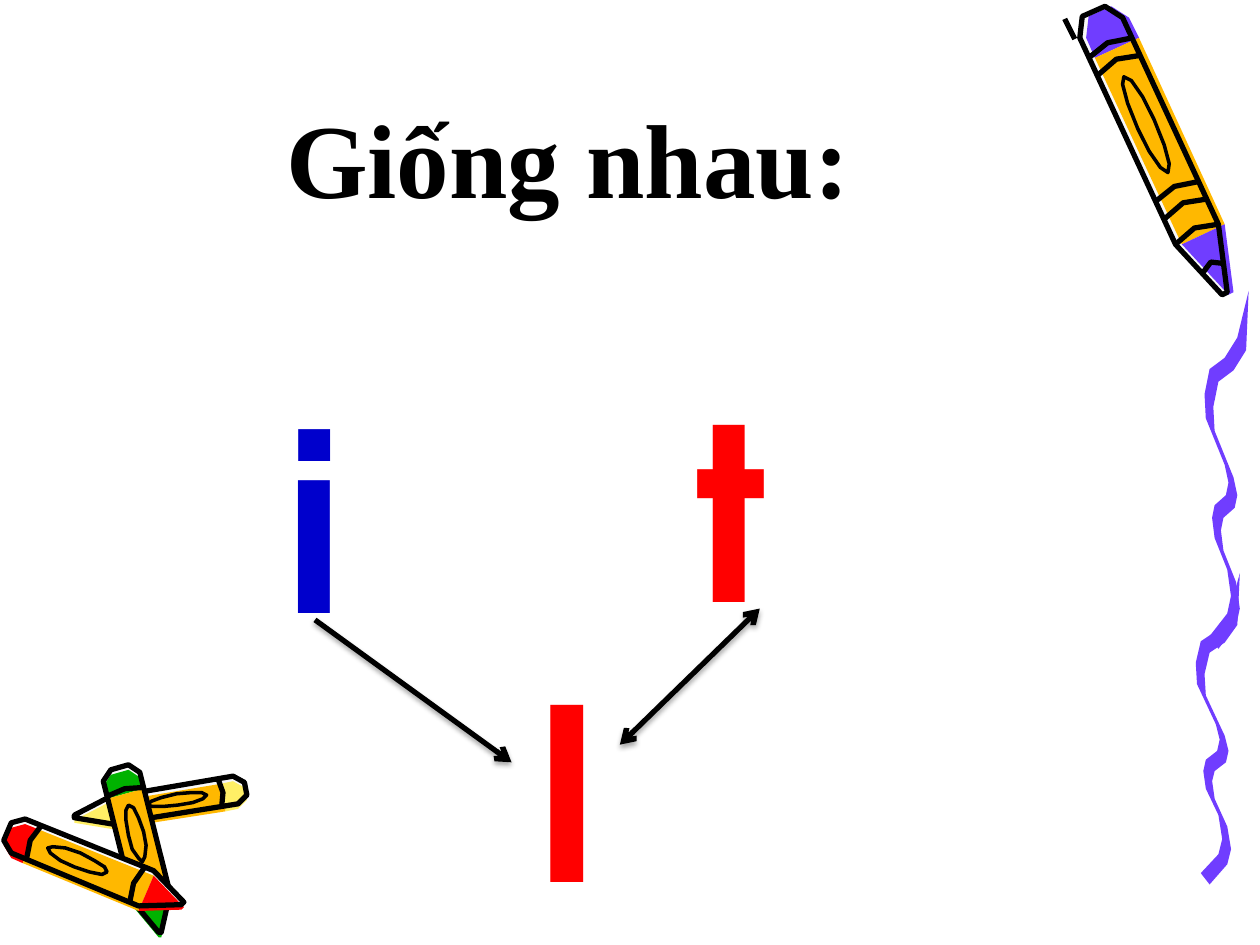
import math

import pptx
import pptx.dml.color
import pptx.enum.shapes
import pptx.enum.text
import pptx.oxml
import pptx.oxml.ns
import pptx.util

PX = 9144  # EMU per px, 100 px to the inch
BLACK, WHITE, RED, BLUE = "000000", "FFFFFF", "FF0000", "0000CC"
PURPLE, ORANGE, GREEN, YELLOW, PALE = "703DFF", "FFB800", "00B200", "FFEF66", "F8F8F8"
LETTER_FONT, TITLE_FONT, BREAK_FONT = "TeX Gyre Adventor", "Times New Roman", "Comic Neue"
LETTER_SIZE = 137
INK = 3  # line width in points

# A crayon in its own measure: u runs from blunt end (0) to tip (1),
# v from one side (-1) to the other (1)
CAP, SHOULDER = 0.13, 0.79
CAP_PART = [(0, -0.5), (0.06, -1), (CAP, -1), (CAP, 1), (0.06, 1), (0, 0.5)]
PAPER_PART = [(CAP, -1), (SHOULDER, -1), (SHOULDER, 1), (CAP, 1)]
TIP_PART = [(SHOULDER, -1), (1, -0.1), (1, 0.1), (SHOULDER, 1)]
SILHOUETTE = CAP_PART[:2] + TIP_PART + CAP_PART[-2:]
LABEL = [(0.4 + 0.17 * math.cos(k * math.pi / 6), 0.4 * math.sin(k * math.pi / 6))
         for k in range(12)]
LONG_BANDS = (CAP, 0.19, 0.64, 0.7, SHOULDER, 0.91)
SHORT_BANDS = (CAP + 0.02, 0.74)

# The squiggle: one edge of a stroke; a slanted nib gives the other edge
WAVE = [(35, 0), (26, 37), (16, 53), (4, 62), (0, 82), (1, 101), (16, 138), (19, 152),
        (17, 162), (8, 170), (6, 180), (8, 196), (18, 221), (21, 242), (18, 256), (4, 274)]
NIB = (7, 10)

SHADOW = ('<a:outerShdw blurRad="39370" dist="22860" dir="5400000" rotWithShape="0">'
          '<a:srgbClr val="000000"><a:alpha val="35000"/></a:srgbClr></a:outerShdw>')


def rgb(color):
    return pptx.dml.color.RGBColor.from_string(color)


def px(*lengths):
    return [pptx.util.Emu(n * PX) for n in lengths]


class SlideBuilder:
    def __init__(self, slide):
        self.s = slide

    def style(self, r, font, size, color):
        r.font.name, r.font.size, r.font.bold = font, pptx.util.Pt(size), True
        r.font.color.rgb = rgb(color)

    def outline(self, points, fill=None, ink=0, close=True):
        points = [(round(x), round(y)) for x, y in points]
        fb = self.s.shapes.build_freeform(*points[0], scale=PX)
        fb.add_line_segments(points[1:], close=close)
        sp = fb.convert_to_shape()
        sp.shadow.inherit = False
        if fill:
            sp.fill.solid()
            sp.fill.fore_color.rgb = rgb(fill)
        else:
            sp.fill.background()
        if ink:
            sp.line.color.rgb = rgb(BLACK)
            sp.line.width = pptx.util.Pt(ink)
        else:
            sp.line.fill.background()

    def crayon(self, end, tip, half_width, color, bands, shift):
        """Colours are printed a little off (by shift) from the ink lines."""
        dx, dy = tip[0] - end[0], tip[1] - end[1]
        side = half_width / math.hypot(dx, dy)

        def place(part, move=(0, 0)):
            return [(end[0] + u * dx - v * side * dy + move[0],
                     end[1] + u * dy + v * side * dx + move[1]) for u, v in part]

        self.outline(place(SILHOUETTE), PALE)
        for part, fill in ((CAP_PART, color), (PAPER_PART, ORANGE), (TIP_PART, color)):
            self.outline(place(part, shift), fill)
        self.outline(place(SILHOUETTE), ink=INK)
        self.outline(place(LABEL), ink=INK - 1)
        for u in bands:
            # A band reaches the edge, which narrows beyond the shoulder
            reach = min(1, (1 - u) / (1 - SHOULDER))
            bent = [(u, -reach), (u - 0.02, 0), (u, reach)]
            self.outline(place(bent), ink=INK, close=False)

    def squiggle(self, left, top, stretch):
        edge = [(left + x, top + y * stretch) for x, y in WAVE]
        other = [(x + NIB[0], y + NIB[1] * stretch) for x, y in edge[1:]]
        self.outline(edge + other[::-1], PURPLE)

    def letter(self, text, box, color):
        tf = self.s.shapes.add_textbox(*px(*box)).text_frame
        tf.word_wrap = True
        tf.text = text
        self.style(tf.paragraphs[0].runs[0], LETTER_FONT, LETTER_SIZE, color)

    def letter_card(self, text, box, color):
        kind = pptx.enum.shapes.MSO_SHAPE.RECTANGLE
        sp = self.s.shapes.add_shape(kind, *px(*box))
        sp.shadow.inherit = False
        sp.fill.solid()
        sp.fill.fore_color.rgb = sp.line.color.rgb = rgb(WHITE)
        sp.line.width = pptx.util.Pt(2)
        tf = sp.text_frame
        tf.text = text
        tf.vertical_anchor = pptx.enum.text.MSO_ANCHOR.MIDDLE
        p = tf.paragraphs[0]
        p.alignment = pptx.enum.text.PP_ALIGN.CENTER
        self.style(p.runs[0], LETTER_FONT, LETTER_SIZE, color)

    def title(self, text, box):
        tf = self.s.shapes.add_textbox(*px(*box)).text_frame
        tf.word_wrap = True
        tf.vertical_anchor = pptx.enum.text.MSO_ANCHOR.MIDDLE
        tf.text = "\v" + text
        p = tf.paragraphs[0]
        p.alignment = pptx.enum.text.PP_ALIGN.CENTER
        self.style(p.runs[-1], TITLE_FONT, 60, BLACK)
        # The line break carries its own size
        br = p._p.find(pptx.oxml.ns.qn("a:br"))
        br.insert(0, pptx.oxml.parse_xml(
            f'<a:rPr {pptx.oxml.ns.nsdecls("a")} sz="4400" b="1">'
            f'<a:latin typeface="{BREAK_FONT}"/></a:rPr>'))

    def line(self, start, end, arrowheads=(), effect=""):
        kind = pptx.enum.shapes.MSO_CONNECTOR.STRAIGHT
        c = self.s.shapes.add_connector(kind, *px(*start, *end))
        c.line.color.rgb = rgb(BLACK)
        c.line.width = pptx.util.Pt(INK)
        ns = pptx.oxml.ns.nsdecls("a")
        for tag in arrowheads:
            c.line._ln.append(pptx.oxml.parse_xml(f'<a:{tag} {ns} type="arrow"/>'))
        c._element.spPr.append(pptx.oxml.parse_xml(f"<a:effectLst {ns}>{effect}</a:effectLst>"))


def main():
    prs = pptx.Presentation()
    prs.slide_width, prs.slide_height = px(1000, 750)
    b = SlideBuilder(prs.slides.add_slide(prs.slide_layouts[6]))

    # Small crayons in a heap, lowest first
    for end, tip, half_width, color in (
            ((195, 626), (59, 648), 11, YELLOW),
            ((95, 609), (127, 740), 15, GREEN),
            ((6, 660), (145, 717), 15, RED)):
        b.crayon(end, tip, half_width, color, SHORT_BANDS, shift=(0, 4))

    # Squiggle in two lengths, and the big crayon that draws it
    b.squiggle(949, 455, stretch=0.87)
    b.squiggle(956, 231, stretch=1)
    b.crayon((868, 9), (972, 233), 19, PURPLE, LONG_BANDS, shift=(5, 0))
    b.line((845, 15), (853, 31))

    # Letters and title
    b.letter("i", (217, 292, 179, 267), BLUE)
    b.letter("t", (542, 283, 158, 283), RED)
    b.title("Giống nhau:", (75, 0, 751, 175))
    b.letter_card("I", (344, 508, 214, 232), RED)

    # Arrows between the letters
    b.line((250, 492), (406, 605), ["tailEnd"], SHADOW)
    b.line((603, 483), (492, 591), ["headEnd", "tailEnd"], SHADOW)

    prs.save("out.pptx")


if __name__ == "__main__":
    main()
